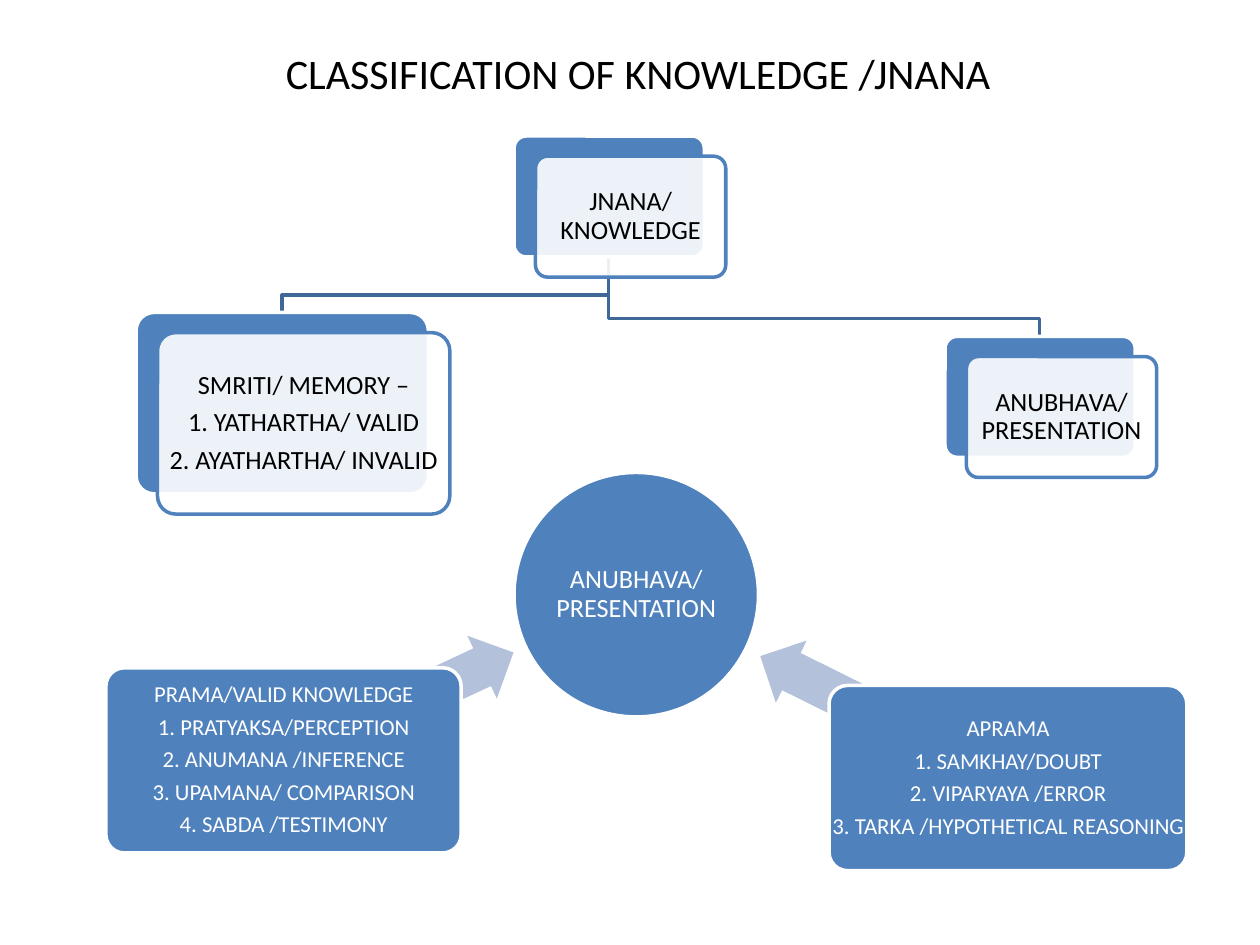
import pptx
import pptx.util
import pptx.dml.color
import pptx.enum.shapes
import pptx.enum.text
import pptx.oxml
import pptx.oxml.ns
from pptx.util import Inches

COLORS = {
    "blue": "4F81BD",
    "connector": "3F6797",
    "arrow": "B3C1DB",
    "white": "FFFFFF",
    "black": "000000",
}
SHAPES = pptx.enum.shapes.MSO_SHAPE


class Diagram:
    font = "Calibri"
    line_width = pptx.util.Pt(2)
    corner = 0.1
    card_offset = 0.17

    def __init__(self, slide):
        self.slide = slide

    def color(self, name):
        return pptx.dml.color.RGBColor.from_string(COLORS[name])

    def style(self, shape, fill, line):
        shape.shadow.inherit = False
        if fill:
            shape.fill.solid()
            shape.fill.fore_color.rgb = self.color(fill)
        else:
            shape.fill.background()
        if line:
            shape.line.color.rgb = self.color(line)
            shape.line.width = self.line_width
        else:
            shape.line.fill.background()

    def shape(self, kind, box, fill, line=None, adjustments=()):
        shape = self.slide.shapes.add_shape(kind, *map(Inches, box))
        self.style(shape, fill, line)
        for index, value in enumerate(adjustments):
            shape.adjustments[index] = value
        return shape

    def rounded(self, box, fill, line):
        return self.shape(SHAPES.ROUNDED_RECTANGLE, box, fill, line, [self.corner])

    def text(self, box, lines, size, color):
        """Centre the lines in the box, one paragraph each."""
        frame = self.slide.shapes.add_textbox(*map(Inches, box)).text_frame
        frame.word_wrap = True
        frame.vertical_anchor = pptx.enum.text.MSO_ANCHOR.MIDDLE
        frame.margin_left = frame.margin_right = 0
        frame.margin_top = frame.margin_bottom = 0
        for index, line in enumerate(lines):
            paragraph = frame.add_paragraph() if index else frame.paragraphs[0]
            paragraph.alignment = pptx.enum.text.PP_ALIGN.CENTER
            paragraph.line_spacing = 0.9
            paragraph.space_after = pptx.util.Pt(size * 0.35)
            self.run(paragraph, line, size, color)

    def run(self, paragraph, text, size, color):
        run = paragraph.add_run()
        run.text = text
        run.font.name = self.font
        run.font.size = pptx.util.Pt(size)
        run.font.color.rgb = self.color(color)

    def title(self, box, text):
        frame = self.slide.shapes.add_textbox(*map(Inches, box)).text_frame
        frame.word_wrap = False
        frame.auto_size = pptx.enum.text.MSO_AUTO_SIZE.SHAPE_TO_FIT_TEXT
        self.run(frame.paragraphs[0], text, 24, "black")

    def elbow(self, start, end, bend):
        """Join two points by a line that turns at height bend."""
        points = [start, (start[0], bend), (end[0], bend), end]
        points = [(Inches(x), Inches(y)) for x, y in points]
        builder = self.slide.shapes.build_freeform(*points[0])
        builder.add_line_segments(points[1:], close=False)
        self.style(builder.convert_to_shape(), None, "connector")

    def card(self, box, lines):
        """Draw a blue card with a translucent labelled card in front."""
        left, top, width, height = box
        self.rounded(box, "blue", "white")
        front_box = (left + self.card_offset, top + self.card_offset - 0.01, width, height)
        front = self.rounded(front_box, "white", "blue")
        fill_color = front.fill._xPr.find(".//" + pptx.oxml.ns.qn("a:srgbClr"))
        alpha = pptx.oxml.parse_xml(
            "<a:alpha %s val='90000'/>" % pptx.oxml.ns.nsdecls("a"))
        fill_color.append(alpha)
        self.text(front_box, lines, 15, "black")

    def circle(self, box, lines):
        self.shape(SHAPES.OVAL, box, "blue", "white")
        self.text(box, lines, 15, "white")

    def arrow(self, box, rotation):
        arrow = self.shape(SHAPES.LEFT_ARROW, box, "arrow", adjustments=[0.6, 0.5])
        arrow.rotation = rotation

    def panel(self, box, lines):
        self.rounded(box, "blue", "white")
        self.text(box, lines, 13, "white")


def main():
    presentation = pptx.Presentation()
    presentation.slide_width = Inches(10)
    presentation.slide_height = Inches(7.5)
    diagram = Diagram(presentation.slides.add_slide(presentation.slide_layouts[6]))

    root = (4.83, 2.04)
    diagram.elbow(root, (8.25, 2.67), 2.53)
    diagram.elbow(root, (2.24, 2.48), 2.34)
    diagram.card((4.08, 1.08, 1.51, 0.96), ["JNANA/ KNOWLEDGE"])
    diagram.card((1.08, 2.48, 2.32, 1.44), [
        "SMRITI/ MEMORY –",
        "1. YATHARTHA/ VALID",
        "2. AYATHARTHA/ INVALID",
    ])
    diagram.card((7.5, 2.67, 1.51, 0.96), ["ANUBHAVA/ PRESENTATION"])

    diagram.circle((4.08, 3.75, 1.94, 1.94), ["ANUBHAVA/ PRESENTATION"])
    diagram.arrow((2.16, 5.33, 2.01, 0.55), 154.9)
    diagram.panel((0.84, 5.3, 2.82, 1.47), [
        "PRAMA/VALID KNOWLEDGE",
        "1. PRATYAKSA/PERCEPTION",
        "2. ANUMANA /INFERENCE",
        "3. UPAMANA/ COMPARISON",
        "4. SABDA /TESTIMONY",
    ])
    diagram.arrow((5.92, 5.42, 2.19, 0.55), 26.4)
    diagram.panel((6.58, 5.44, 2.84, 1.47), [
        "APRAMA",
        "1. SAMKHAY/DOUBT",
        "2. VIPARYAYA /ERROR",
        "3. TARKA /HYPOTHETICAL REASONING",
    ])
    diagram.title((2.17, 0.33, 5.84, 0.5), "CLASSIFICATION OF KNOWLEDGE /JNANA")
    presentation.save("out.pptx")


if __name__ == "__main__":
    main()
